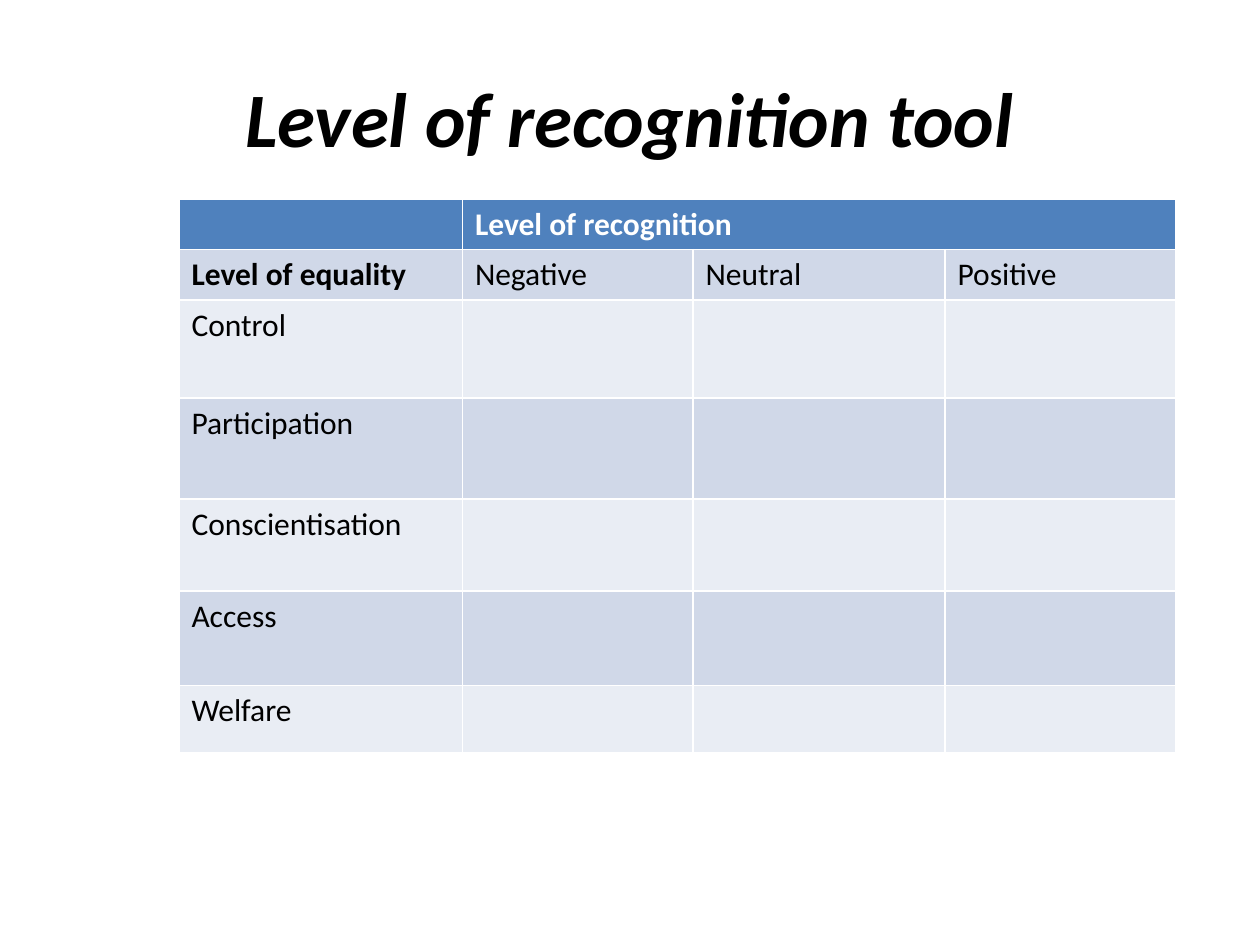
from dataclasses import dataclass

from lxml.etree import SubElement as Sub
from pptx import Presentation as Deck
from pptx.dml.color import RGBColor as Rgb
from pptx.enum.text import MSO_ANCHOR as Anchor, PP_ALIGN as Align
from pptx.oxml.ns import qn
from pptx.util import Inches, Pt

COLORS = {
    "ink": "000000",
    "white": "FFFFFF",
    "head": "4F81BD",
    "dark": "D0D8E8",
    "light": "E9EDF4",
}
COLS = [2.25, 1.83, 2, 1.83]
ROWS = [0.4, 0.4, 0.78, 0.8, 0.73, 0.75, 0.53]


@dataclass
class Entry:
    row: int
    col: int
    text: str
    bold: bool = False
    color: str = "ink"


ENTRIES = [
    Entry(0, 1, "Level of recognition", True, "white"),
    Entry(1, 0, "Level of equality", True),
]
ENTRIES += [
    Entry(1, col, name)
    for col, name in enumerate(["Negative", "Neutral", "Positive"], 1)
]
ENTRIES += [
    Entry(row, 0, name)
    for row, name in enumerate(
        ["Control", "Participation", "Conscientisation", "Access", "Welfare"], 2
    )
]


def write(frame, text: str, color: str, style: dict) -> None:
    para = frame.paragraphs[0]
    run = para.add_run()
    run.text = text
    for key, value in style.items():
        setattr(run.font, key, value)
    run.font.color.rgb = Rgb.from_string(COLORS[color])


def add_title(slide, text: str) -> None:
    box = slide.shapes.add_textbox(
        Inches(0.5), Inches(0.3), Inches(9), Inches(1.25)
    )
    frame = box.text_frame
    frame.word_wrap = True
    frame.vertical_anchor = Anchor.MIDDLE
    frame.paragraphs[0].alignment = Align.CENTER
    style = {"name": "Calibri", "size": Pt(44), "bold": True, "italic": True}
    write(frame, text, "ink", style)


def paint(cell, color: str) -> None:
    props = cell._tc.get_or_add_tcPr()
    for side in ("lnL", "lnR", "lnT", "lnB"):
        line = Sub(props, qn(f"a:{side}"), w=str(Pt(1)))
        fill = Sub(line, qn("a:solidFill"))
        Sub(fill, qn("a:srgbClr"), val=COLORS["white"])
    cell.fill.solid()
    cell.fill.fore_color.rgb = Rgb.from_string(COLORS[color])


def add_grid(slide) -> None:
    frame = slide.shapes.add_table(
        len(ROWS), len(COLS), Inches(1.42), Inches(1.58),
        Inches(sum(COLS)), Inches(sum(ROWS)),
    )
    table = frame.table
    for col, width in zip(table.columns, COLS):
        col.width = Inches(width)
    for index, (row, height) in enumerate(zip(table.rows, ROWS)):
        row.height = Inches(height)
        band = "dark" if index % 2 else "light"
        for cell in row.cells:
            paint(cell, band if index else "head")
    table.cell(0, 1).merge(table.cell(0, 3))
    for item in ENTRIES:
        style = {"name": "Calibri", "size": Pt(18), "bold": item.bold}
        cell = table.cell(item.row, item.col)
        write(cell.text_frame, item.text, item.color, style)


def main() -> None:
    deck = Deck()
    deck.slide_width = Inches(10)
    deck.slide_height = Inches(7.5)
    slide = deck.slides.add_slide(deck.slide_layouts[6])
    add_title(slide, "Level of recognition tool")
    add_grid(slide)
    deck.save("out.pptx")


if __name__ == "__main__":
    main()
